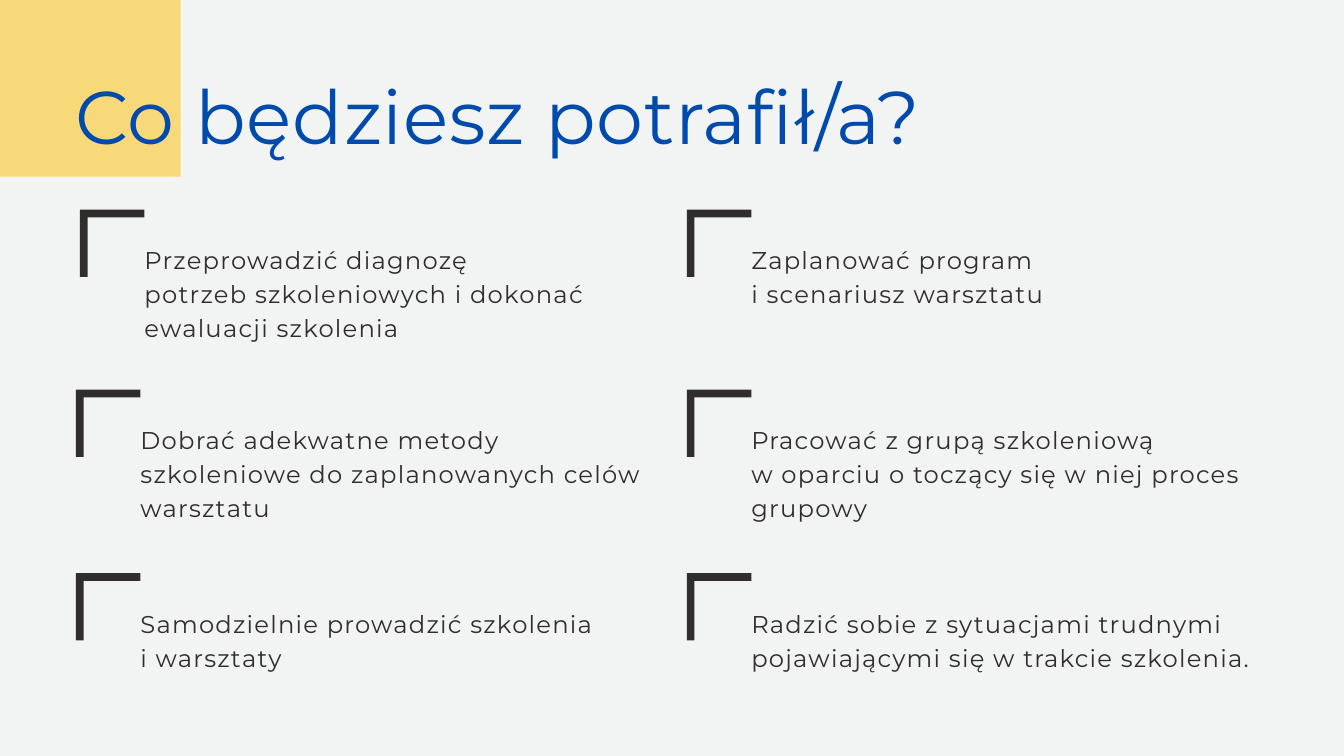
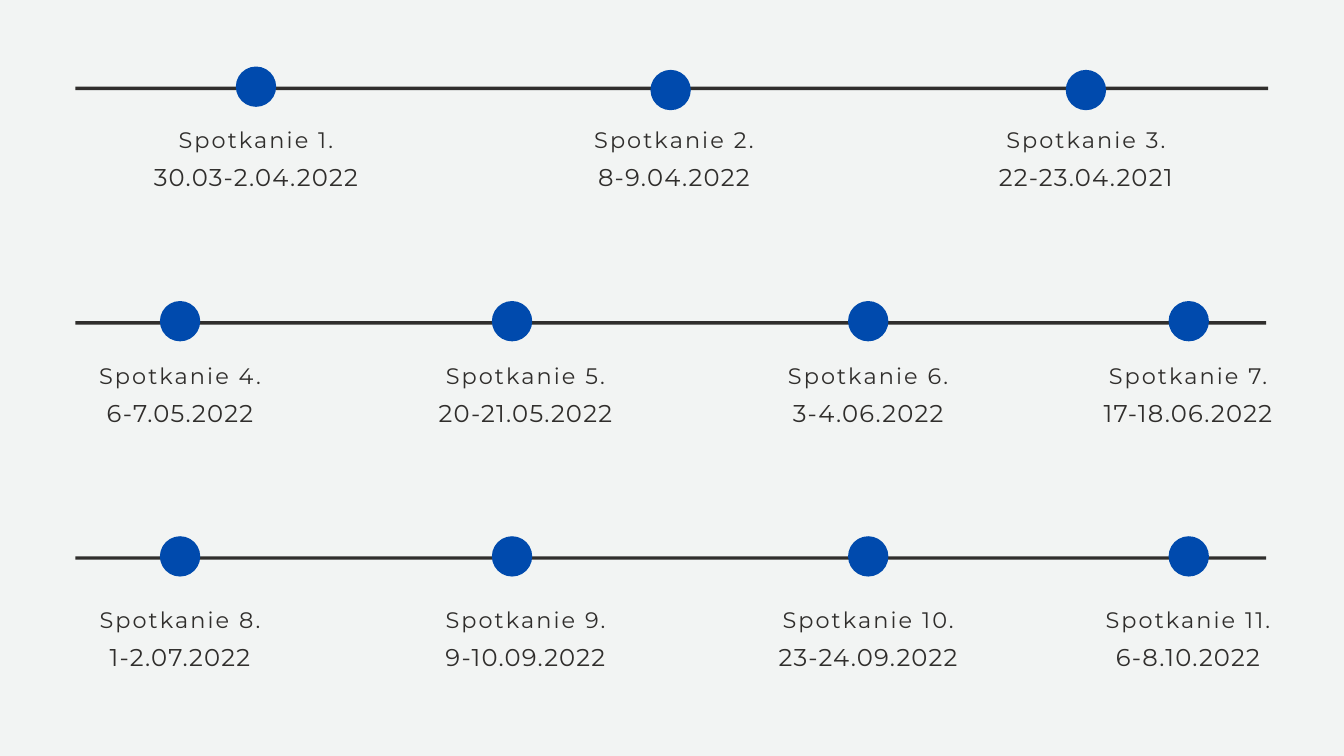
from dataclasses import dataclass

from lxml.etree import SubElement
from pptx import Presentation
from pptx.dml.color import RGBColor
from pptx.dml.fill import FillFormat
from pptx.enum.shapes import MSO_SHAPE
from pptx.enum.text import MSO_AUTO_SIZE, PP_ALIGN
from pptx.oxml.ns import qn
from pptx.slide import Slide
from pptx.util import Inches, Pt

FONT = "Montserrat"
PAPER, INK, BLUE, GOLD = "F2F4F3", "302E2C", "004AAD", "FFBF00"
MARGIN = 1.12


@dataclass(frozen=True)
class Style:
    size: float
    leading: float
    spacing: float
    color: str = INK
    align: PP_ALIGN = PP_ALIGN.LEFT


TITLE = Style(80, 108.8, 0.8, BLUE)
BODY = Style(26, 36.4, 1.3)
NAME = Style(24, 32.7, 2.2, align=PP_ALIGN.CENTER)
DATE = Style(26, 36.4, 1.3, align=PP_ALIGN.CENTER)


@dataclass(frozen=True)
class Skill:
    left: float
    top: float
    lines: tuple[str, ...]


@dataclass(frozen=True)
class Stop:
    dot: float
    label: float
    date: str
    drop: float = 0


@dataclass(frozen=True)
class Track:
    top: float
    width: float
    gap: float
    stops: tuple[Stop, ...]


LEFT, RIGHT = 1.13, 10.22
SKILLS = (
    Skill(1.19, 3.12, ("Przeprowadzić diagnozę",
                       "potrzeb szkoleniowych i dokonać ewaluacji szkolenia")),
    Skill(RIGHT, 3.12, ("Zaplanować program", "i scenariusz warsztatu")),
    Skill(LEFT, 5.8, ("Dobrać adekwatne metody",
                      "szkoleniowe do zaplanowanych celów warsztatu")),
    Skill(RIGHT, 5.8, ("Pracować z grupą szkoleniową",
                       "w oparciu o toczący się w niej proces grupowy")),
    Skill(LEFT, 8.53, ("Samodzielnie prowadzić szkolenia", "i warsztaty")),
    Skill(RIGHT, 8.53, ("Radzić sobie z sytuacjami trudnymi "
                        "pojawiającymi się w trakcie szkolenia.",)),
)


def four(*dates: str) -> tuple[Stop, ...]:
    """Place four dates on the stops shared by the lower tracks."""
    dots, labels = (2.68, 7.62, 12.92, 17.69), (2.68, 7.82, 12.92, 17.68)
    return tuple(map(Stop, dots, labels, dates))


TRACKS = (
    Track(1.29, 17.75, 0.53, (
        Stop(3.81, 3.81, "30.03-2.04.2022"),
        Stop(9.98, 10.03, "8-9.04.2022", 0.05),
        Stop(16.16, 16.16, "22-23.04.2021", 0.05))),
    Track(4.78, 17.72, 0.55, four(
        "6-7.05.2022", "20-21.05.2022", "3-4.06.2022", "17-18.06.2022")),
    Track(8.28, 17.72, 0.68, four(
        "1-2.07.2022", "9-10.09.2022", "23-24.09.2022", "6-8.10.2022")),
)


def paint(fill: FillFormat, color: str, alpha: int = 100) -> None:
    fill.solid()
    fill.fore_color.rgb = RGBColor.from_string(color)
    if alpha < 100:
        tint = fill._xPr.find(qn("a:solidFill"))[0]
        SubElement(tint, qn("a:alpha"), val=str(alpha * 1000))


def add_page(deck: Presentation) -> Slide:
    page = deck.slides.add_slide(deck.slide_layouts[6])
    paint(page.background.fill, PAPER)
    return page


def add_form(page: Slide, kind: MSO_SHAPE, left: float, top: float,
             width: float, height: float, color: str, alpha: int = 100) -> None:
    form = page.shapes.add_shape(kind, Inches(left), Inches(top),
                                 Inches(width), Inches(height))
    form.shadow.inherit = False
    form.line.fill.background()
    paint(form.fill, color, alpha)


def add_text(page: Slide, left: float, top: float, width: float,
             lines: tuple[str, ...], style: Style, rows: int = 1) -> None:
    height = Pt(style.leading * rows)
    frame = page.shapes.add_textbox(Inches(left), Inches(top),
                                    Inches(width), height).text_frame
    frame.margin_left = frame.margin_right = 0
    frame.margin_top = frame.margin_bottom = 0
    frame.word_wrap = True
    frame.auto_size = MSO_AUTO_SIZE.SHAPE_TO_FIT_TEXT
    for i, line in enumerate(lines):
        para = frame.add_paragraph() if i else frame.paragraphs[0]
        para.alignment = style.align
        para.line_spacing = Pt(style.leading)
        run = para.add_run()
        run.text = line
        run.font.name = FONT
        run.font.size = Pt(style.size)
        run.font.color.rgb = RGBColor.from_string(style.color)
        run.font._element.set("spc", str(round(style.spacing * 100)))


def add_corner(page: Slide, left: float, top: float) -> None:
    width, height, thick = 0.96, 1, 0.115
    points = ((width, 0), (width, thick), (thick, thick),
              (thick, height), (0, height))
    pen = page.shapes.build_freeform(Inches(left), Inches(top), scale=1.0)
    pen.add_line_segments([(Inches(left + x), Inches(top + y))
                           for x, y in points], close=True)
    corner = pen.convert_to_shape()
    corner.shadow.inherit = False
    corner.line.fill.background()
    paint(corner.fill, INK)


def add_skills(deck: Presentation) -> None:
    page = add_page(deck)
    add_form(page, MSO_SHAPE.RECTANGLE, -0.31, -0.29, 3, 2.92, GOLD, 50)
    add_text(page, MARGIN, 0.86, 17.29, ("Co będziesz potrafił/a?",), TITLE)
    for skill in SKILLS:
        rows = 3 if sum(map(len, skill.lines)) > 65 and len(skill.lines) > 1 else 2
        add_text(page, skill.left + 0.96, skill.top + 0.46, 7.52,
                 skill.lines, BODY, rows)
        add_corner(page, skill.left, skill.top)


def add_dates(deck: Presentation) -> None:
    page = add_page(deck)
    size, width = 0.6, 4.76
    count = 0
    for track in TRACKS:
        add_form(page, MSO_SHAPE.RECTANGLE, MARGIN, track.top,
                 track.width, 0.05, INK)
        for stop in track.stops:
            count += 1
            add_form(page, MSO_SHAPE.OVAL, stop.dot - size / 2,
                     track.top - size / 2 + stop.drop, size, size, BLUE)
            left, top = stop.label - width / 2, track.top + track.gap
            add_text(page, left, top, width, (f"Spotkanie {count}.",), NAME)
            add_text(page, left, top + 0.52, width, (stop.date,), DATE)


def main() -> None:
    deck = Presentation()
    deck.slide_width, deck.slide_height = Inches(20), Inches(11.25)
    add_skills(deck)
    add_dates(deck)
    deck.save("out.pptx")


if __name__ == "__main__":
    main()
